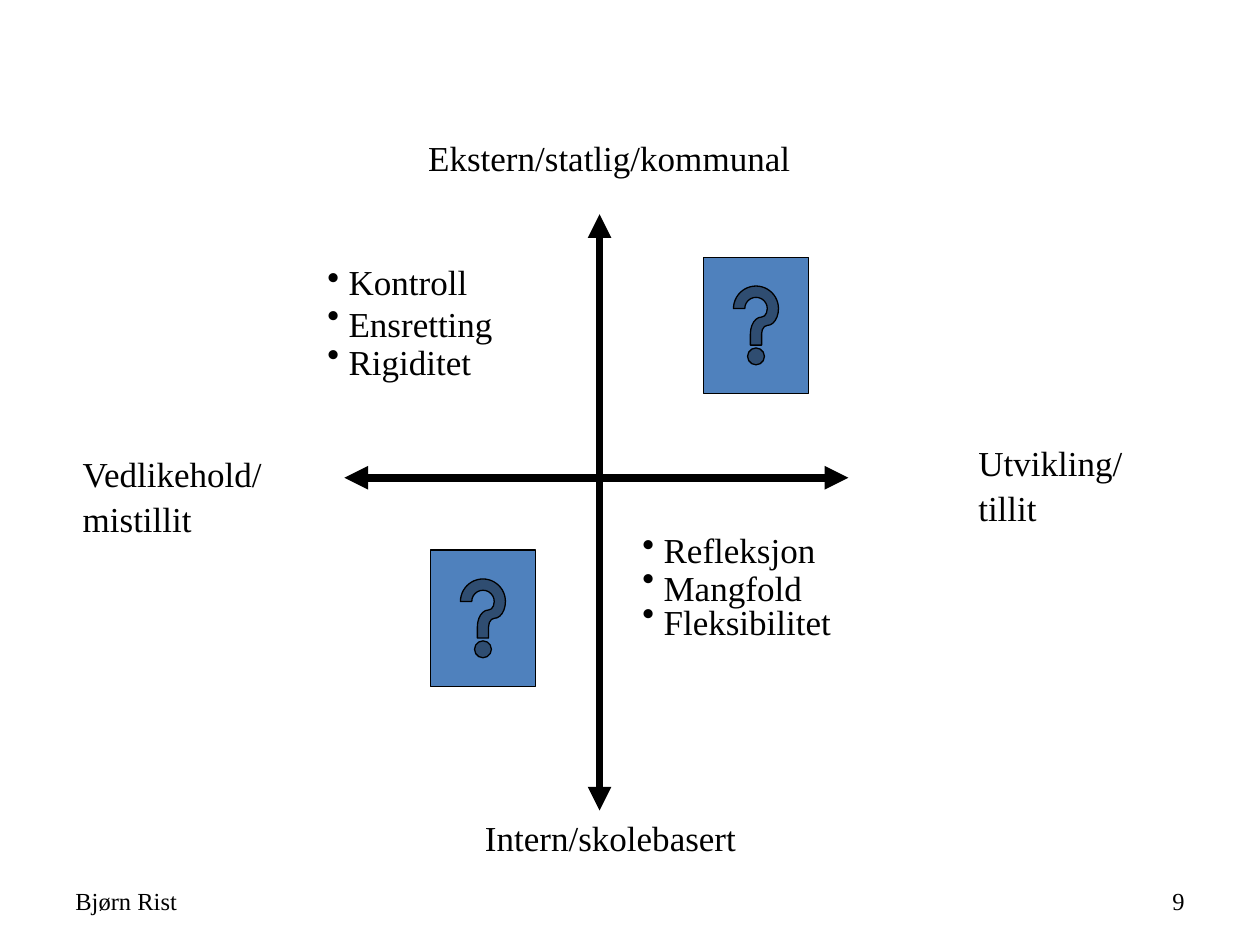
from dataclasses import dataclass

from lxml import etree
from pptx import Presentation, util as u
from pptx.dml.color import RGBColor
from pptx.enum import shapes, text
from pptx.oxml.ns import qn

# The slide is a grid of 120 columns by 90 rows, 12 to the inch.
COLUMNS, ROWS = 120, 90
CELL = u.Inches(1) // 12
FONT, BLACK, BLUE = "Times New Roman", "000000", "4F81BD"
LABEL_SIZE, FOOTER_SIZE = 20, 14


@dataclass
class Area:
    column: float
    row: float
    columns: float
    rows: float

    def lengths(self) -> list[int]:
        return [cells(n) for n in (self.column, self.row, self.columns, self.rows)]


@dataclass
class Label:
    area: Area
    lines: list[str]
    spacing: float = 1.0
    bullet: str = ""


@dataclass
class Axis:
    start: tuple[float, float]
    end: tuple[float, float]


def cells(count: float) -> int:
    return round(count * CELL)


def colour(value: str) -> RGBColor:
    return RGBColor.from_string(value)


def add_text(page, area: Area, lines: list[str], *, size: int = LABEL_SIZE,
             spacing: float = 1.0, bullet: str = "",
             align=text.PP_ALIGN.LEFT, anchor=text.MSO_ANCHOR.TOP) -> None:
    """Write one paragraph per line; spacing applies from the second line on."""
    frame = page.shapes.add_textbox(*area.lengths()).text_frame
    frame.word_wrap = True
    frame.vertical_anchor = anchor
    for index, line in enumerate(lines):
        para = frame.paragraphs[0] if index == 0 else frame.add_paragraph()
        para.alignment = align
        if index:
            para.line_spacing = spacing
        add_paragraph_details(para, bullet)
        span = para.add_run()
        span.text = line
        span.font.name = FONT
        span.font.size = u.Pt(size)
        span.font.color.rgb = colour(BLACK)


def add_paragraph_details(para, bullet: str) -> None:
    """Add half a line of space before, and the bullet if there is one."""
    properties = para._p.get_or_add_pPr()
    before = etree.SubElement(properties, qn("a:spcBef"))
    etree.SubElement(before, qn("a:spcPct"), val="50000")
    if bullet:
        etree.SubElement(properties, qn("a:buChar"), char=bullet)


def add_axis(page, axis: Axis) -> None:
    line = page.shapes.add_connector(
        shapes.MSO_CONNECTOR.STRAIGHT, *map(cells, axis.start + axis.end))
    line.line.color.rgb = colour(BLACK)
    line.line.width = u.Pt(4.5)
    outline = line.line._get_or_add_ln()
    for end in ("a:headEnd", "a:tailEnd"):
        etree.SubElement(outline, qn(end), type="triangle")
    etree.SubElement(line._element.spPr, qn("a:effectLst"))


def add_question(page, area: Area) -> None:
    button = page.shapes.add_shape(
        shapes.MSO_SHAPE.ACTION_BUTTON_HELP, *area.lengths())
    button.shadow.inherit = False
    button.fill.solid()
    button.fill.fore_color.rgb = colour(BLUE)
    button.line.color.rgb = colour(BLACK)
    button.line.width = u.Pt(0.75)


AXES = [
    Axis((57.1, 20.4), (57.1, 77.2)),
    Axis((32.8, 45.5), (80.8, 45.5)),
]
QUESTIONS = [Area(67, 24.5, 10, 13), Area(41, 52.4, 10, 13)]
LABELS = [
    Label(Area(39.6, 12.4, 45, 5.2), ["Ekstern/statlig/kommunal"]),
    Label(Area(45, 77.2, 45, 5.2), ["Intern/skolebasert"]),
    Label(Area(92, 41.5, 25, 9.6), ["Utvikling/", "tillit"], 0.6),
    Label(Area(6.7, 42.5, 24, 9.6), ["Vedlikehold/", "mistillit"], 0.6),
    Label(Area(30, 24.25, 25, 13.2),
          [" Kontroll", " Ensretting", " Rigiditet"], 0.5, "•"),
    Label(Area(60, 49.7, 28, 12.4),
          [" Refleksjon", " Mangfold", " Fleksibilitet"], 0.4, "•"),
]
FOOTERS = [
    (6, "Bjørn Rist", text.PP_ALIGN.LEFT),
    (86, "9", text.PP_ALIGN.RIGHT),
]


def main() -> None:
    deck = Presentation()
    deck.slide_width, deck.slide_height = cells(COLUMNS), cells(ROWS)
    page = deck.slides.add_slide(deck.slide_layouts[6])
    for column, line, align in FOOTERS:
        add_text(page, Area(column, 83.4, 28, 4.8), [line], size=FOOTER_SIZE,
                 align=align, anchor=text.MSO_ANCHOR.MIDDLE)
    for axis in AXES:
        add_axis(page, axis)
    for area in QUESTIONS:
        add_question(page, area)
    for label in LABELS:
        add_text(page, label.area, label.lines,
                 spacing=label.spacing, bullet=label.bullet)
    deck.save("out.pptx")


if __name__ == "__main__":
    main()
